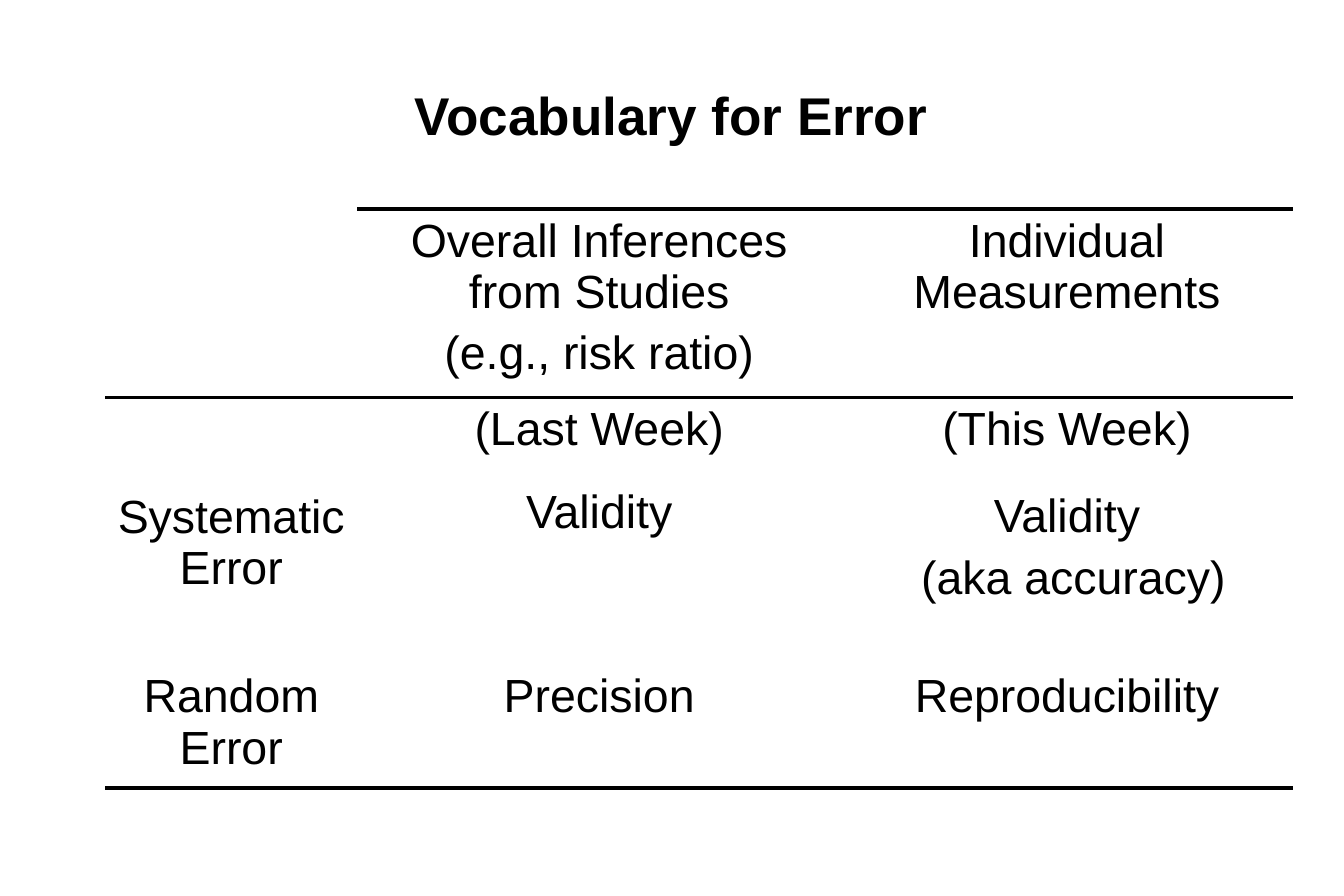
from lxml import etree
from pptx import Presentation
from pptx.dml.color import RGBColor
from pptx.enum.text import MSO_ANCHOR, PP_ALIGN
from pptx.oxml.ns import qn
from pptx.util import Pt

CENTER = PP_ALIGN.CENTER
MIDDLE = MSO_ANCHOR.MIDDLE
BLACK = "000000"
FONT = "Arial"
RULE_WIDTH = 2.25

COLUMN_WIDTHS = [151.9, 291.6, 272.2]
ROW_HEIGHTS = [106.6, 141.8, 88.8]
PARA_GAP = 5.6
INSET = 3.6

# Each cell: top margin, then (text, space before) for each paragraph
CELLS = [
    [
        (INSET, []),
        (INSET, [("Overall Inferences from Studies", 0),
                 ("(e.g., risk ratio)", PARA_GAP)]),
        (INSET, [("Individual Measurements", 0)]),
    ],
    [
        (56.3, [("Systematic Error", 0)]),
        (INSET, [("(Last Week)", 0), ("Validity", 18.8)]),
        (INSET, [("(This Week)", 0), ("Validity", 21.4),
                 (" (aka accuracy)", PARA_GAP)]),
    ],
    [
        (22.6, [("Random Error", 0)]),
        (22.6, [("Precision", 0)]),
        (22.6, [("Reproducibility", 0)]),
    ],
]


def color(value):
    return RGBColor.from_string(value)


def write(para, text, size=28, bold=False, before=0):
    para.alignment = CENTER
    para.space_before = Pt(before)
    span = para.add_run()
    span.text = text
    span.font.name = FONT
    span.font.size = Pt(size)
    span.font.bold = bold
    span.font.color.rgb = color(BLACK)


def add_title(page, text):
    box = page.shapes.add_textbox(Pt(60.5), Pt(48.2), Pt(688.3), Pt(41.8))
    frame = box.text_frame
    frame.word_wrap = True
    frame.vertical_anchor = MIDDLE
    write(frame.paragraphs[0], text, size=32, bold=True)


def set_borders(cell, ruled_sides):
    """Rule the given sides (T, B) and clear the others."""
    properties = cell._tc.get_or_add_tcPr()
    for index, side in enumerate("LRTB"):
        line = etree.Element(qn("a:ln" + side))
        if side in ruled_sides:
            line.set("w", str(Pt(RULE_WIDTH)))
            fill = etree.SubElement(line, qn("a:solidFill"))
            etree.SubElement(fill, qn("a:srgbClr"), val=BLACK)
        else:
            etree.SubElement(line, qn("a:noFill"))
        properties.insert(index, line)


def fill_cell(cell, top_margin, paragraphs):
    cell.fill.background()
    cell.margin_top = Pt(top_margin)
    cell.margin_bottom = Pt(INSET)
    frame = cell.text_frame
    for index, (text, before) in enumerate(paragraphs):
        para = frame.add_paragraph() if index else frame.paragraphs[0]
        write(para, text, before=before)


def add_vocabulary_table(page):
    table = page.shapes.add_table(
        len(ROW_HEIGHTS), len(COLUMN_WIDTHS), Pt(63.4), Pt(126),
        Pt(sum(COLUMN_WIDTHS)), Pt(sum(ROW_HEIGHTS))).table
    table.first_row = False
    table.horz_banding = False
    for column, width in zip(table.columns, COLUMN_WIDTHS):
        column.width = Pt(width)
    for row, height in zip(table.rows, ROW_HEIGHTS):
        row.height = Pt(height)

    for row, cells in enumerate(CELLS):
        for column, (top_margin, paragraphs) in enumerate(cells):
            cell = table.cell(row, column)
            fill_cell(cell, top_margin, paragraphs)
            # The header's top rule skips the empty corner
            sides = ["TB" if column else "B", "T", "B"][row]
            set_borders(cell, sides)


def main():
    deck = Presentation()
    deck.slide_width = Pt(810)
    deck.slide_height = Pt(540)
    page = deck.slides.add_slide(deck.slide_layouts[6])
    add_title(page, "Vocabulary for Error")
    add_vocabulary_table(page)
    deck.save("out.pptx")


if __name__ == "__main__":
    main()
